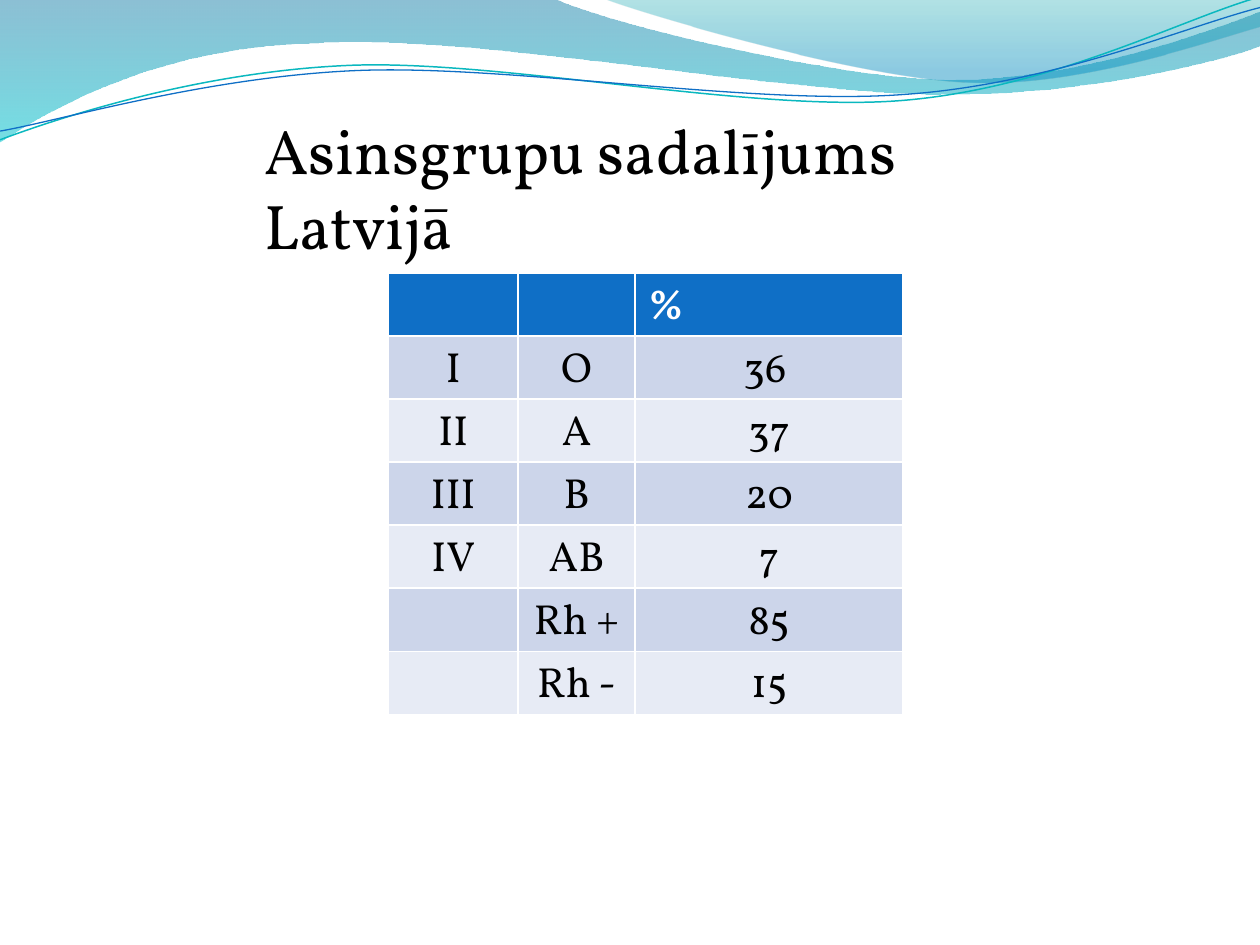
import dataclasses
import typing

import lxml.etree
import pptx
import pptx.dml.color
import pptx.enum.text
import pptx.oxml.ns
import pptx.util

Pt = pptx.util.Pt
Point = tuple[float, float]
# One point is a straight segment, three points are a cubic curve.
Segment = tuple[Point, ...]


@dataclasses.dataclass(frozen=True)
class Theme:
    font: str = "Vollkorn"
    title_size: int = 36
    table_size: int = 24
    text: str = "000000"
    header_text: str = "FFFFFF"
    header_fill: str = "0F6FC6"
    bands: tuple[str, str] = ("CCD5EA", "E7EBF5")
    teal_line: str = "0AB8BF"
    blue_line: str = "0F6FC6"


class Stop(typing.NamedTuple):
    position: float
    color: str
    opacity: int


@dataclasses.dataclass(frozen=True)
class Wave:
    start: Point
    segments: tuple[Segment, ...]
    stops: tuple[Stop, ...] = ()
    line: str = ""
    line_width: float = 0


THEME = Theme()

WAVES = (
    Wave(
        (0, 0),
        (
            ((316.8, -0.7),),
            ((342.7, 12.2), (478.1, 45.4), (545.8, 45.4)),
            ((614.2, 45.4), (689.8, 18.7), (720, 6.5)),
            ((720.7, 25.9),),
            ((707.8, 31.7), (626.4, 54.7), (537.1, 54)),
            ((447.8, 54), (275, 20.2), (185, 24.5)),
            ((92.9, 25.9), (33.1, 59.8), (-0.7, 81.4)),
        ),
        stops=(Stop(0, "0074A1", 45), Stop(1, "00C6CF", 55)),
    ),
    Wave(
        (344.9, -0.7),
        (
            ((366.5, 7.9), (491, 44.6), (553.7, 46.8)),
            ((616.3, 49.7), (691.9, 23), (720, 15.1)),
            ((720, 0),),
        ),
        stops=(Stop(0, "00A1A9", 30), Stop(0.8, "008BBF", 45)),
    ),
    Wave(
        (0, 79.9),
        (
            ((34.6, 67), (113.8, 41), (199.4, 37.4)),
            ((284.4, 33.8), (427, 64.1), (513.4, 57.6)),
            ((599.8, 51.1), (675.4, 10.8), (718.6, -1.4)),
        ),
        line=THEME.teal_line,
        line_width=0.85,
    ),
    Wave(
        (0, 74.9),
        (
            ((33.8, 69.1), (118.1, 43.9), (203.8, 40.3)),
            ((290.2, 36.7), (429.8, 60.5), (516.2, 54)),
            ((601.9, 48.2), (677.5, 15.1), (720, 4.3)),
        ),
        line=THEME.blue_line,
        line_width=0.75,
    ),
)

COLUMN_WIDTHS = (74, 67, 153)
ROW_HEIGHT = 36
BLOOD_GROUPS = (
    ("", "", "%"),
    ("I", "O", "36 "),
    ("II", "A", "37"),
    ("III", "B", "20"),
    ("IV", "AB", "7"),
    ("", "Rh +", "85"),
    ("", "Rh -", "15"),
)


def rgb(color: str) -> pptx.dml.color.RGBColor:
    return pptx.dml.color.RGBColor.from_string(color)


def style_text(frame, size: int, color: str, bold: bool = False) -> None:
    for para in frame.paragraphs:
        for span in para.runs:
            span.font.name = THEME.font
            span.font.size = Pt(size)
            span.font.bold = bold
            span.font.color.rgb = rgb(color)


def bend_segments(shape, segments: tuple[Segment, ...]) -> None:
    """Turn each run of three straight steps that stands for a curve into a cubic one."""
    steps = iter(list(shape.element.iter(pptx.oxml.ns.qn("a:lnTo"))))
    for segment in segments:
        group = [next(steps) for _ in segment]
        if len(group) == 3:
            curve = lxml.etree.Element(pptx.oxml.ns.qn("a:cubicBezTo"))
            group[0].addprevious(curve)
            for step in group:
                curve.append(step[0])
                step.getparent().remove(step)


def fill_gradient(shape, stops: tuple[Stop, ...]) -> None:
    shape.fill.gradient()
    shape.fill.gradient_angle = 270
    for target, stop in zip(shape.fill.gradient_stops, stops):
        target.position = stop.position
        target.color.rgb = rgb(stop.color)
    colors = shape.element.spPr.iter(pptx.oxml.ns.qn("a:srgbClr"))
    for color, stop in zip(list(colors), stops):
        alpha = lxml.etree.SubElement(color, pptx.oxml.ns.qn("a:alpha"))
        alpha.set("val", str(stop.opacity * 1000))


def draw_wave(slide, wave: Wave) -> None:
    builder = slide.shapes.build_freeform(*map(Pt, wave.start))
    points = [(Pt(x), Pt(y)) for segment in wave.segments for x, y in segment]
    builder.add_line_segments(points, close=bool(wave.stops))
    shape = builder.convert_to_shape()
    shape.shadow.inherit = False
    bend_segments(shape, wave.segments)
    if wave.stops:
        fill_gradient(shape, wave.stops)
        shape.line.fill.background()
    else:
        shape.fill.background()
        shape.line.color.rgb = rgb(wave.line)
        shape.line.width = Pt(wave.line_width)


def draw_title(slide, text: str) -> None:
    title = slide.shapes.title
    slide.shapes.element.append(title.element)  # in front of the waves
    title.left, title.top, title.width, title.height = map(Pt, (144, 60, 484, 51))
    frame = title.text_frame
    frame.text = text
    frame.word_wrap = True
    frame.auto_size = pptx.enum.text.MSO_AUTO_SIZE.SHAPE_TO_FIT_TEXT
    frame.vertical_anchor = pptx.enum.text.MSO_ANCHOR.TOP
    frame.paragraphs[0].alignment = pptx.enum.text.PP_ALIGN.LEFT
    style_text(frame, THEME.title_size, THEME.text)


def draw_table(slide) -> None:
    """The default table style supplies the white rules between cells."""
    size = (sum(COLUMN_WIDTHS), ROW_HEIGHT * len(BLOOD_GROUPS))
    table = slide.shapes.add_table(
        len(BLOOD_GROUPS), len(COLUMN_WIDTHS), *map(Pt, (222, 156, *size))
    ).table
    for column, width in zip(table.columns, COLUMN_WIDTHS):
        column.width = Pt(width)
    for row_index, values in enumerate(BLOOD_GROUPS):
        header = row_index == 0
        band = THEME.header_fill if header else THEME.bands[(row_index - 1) % 2]
        color = THEME.header_text if header else THEME.text
        for cell, value in zip(table.rows[row_index].cells, values):
            cell.fill.solid()
            cell.fill.fore_color.rgb = rgb(band)
            cell.text_frame.text = value
            if not header:
                cell.text_frame.paragraphs[0].alignment = pptx.enum.text.PP_ALIGN.CENTER
            style_text(cell.text_frame, THEME.table_size, color, header)


def main() -> None:
    deck = pptx.Presentation()
    deck.slide_width, deck.slide_height = Pt(720), Pt(540)
    slide = deck.slides.add_slide(deck.slide_layouts[5])
    for wave in WAVES:
        draw_wave(slide, wave)
    draw_title(slide, "Asinsgrupu sadalījums Latvijā")
    draw_table(slide)
    deck.save("out.pptx")


if __name__ == "__main__":
    main()
